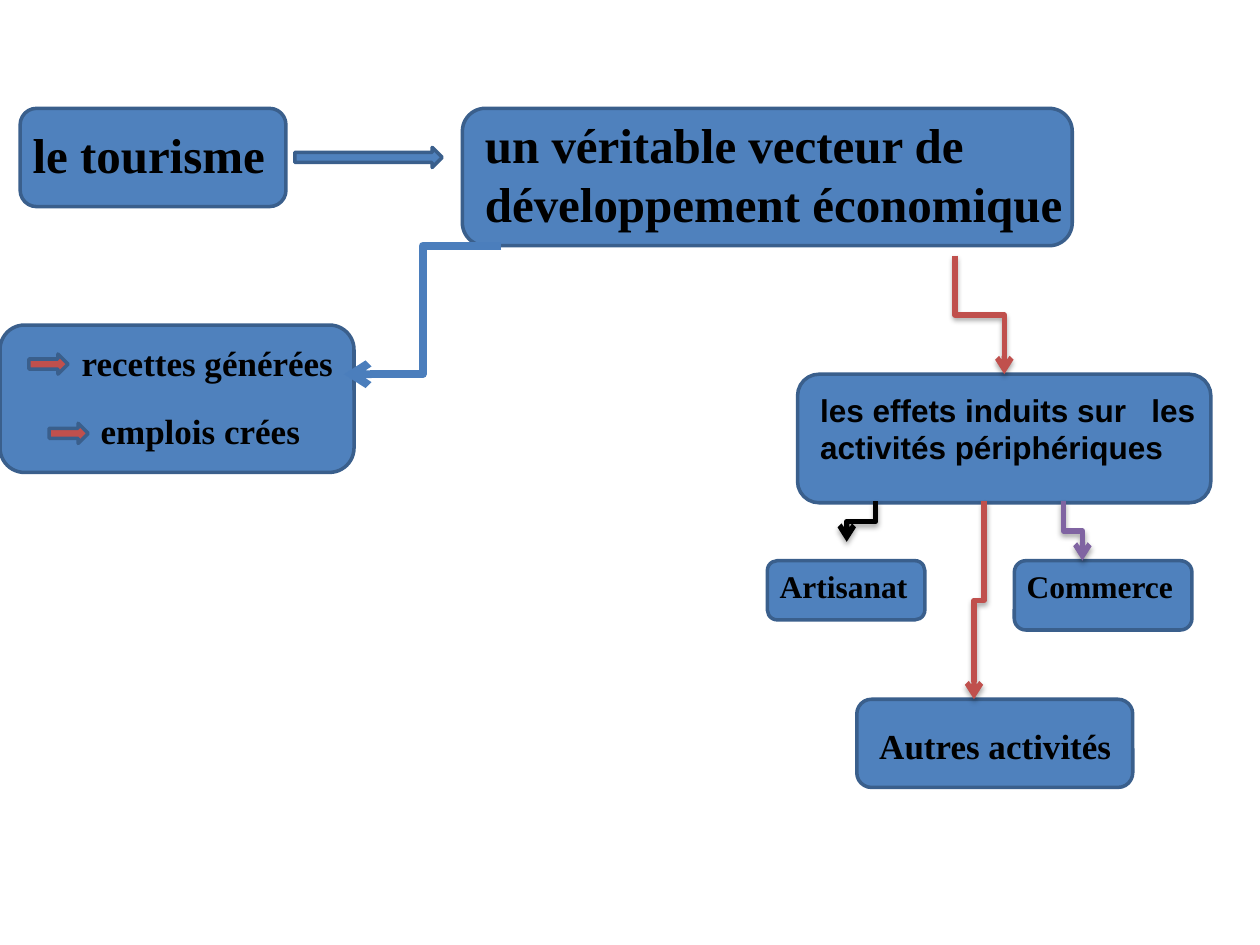
from lxml import etree
from pptx import Presentation
from pptx.dml.color import RGBColor
from pptx.enum.shapes import MSO_CONNECTOR as Conn, MSO_SHAPE as Shape
from pptx.enum.text import MSO_AUTO_SIZE as Fit, PP_ALIGN as Align
from pptx.oxml import parse_xml
from pptx.oxml.ns import nsdecls, qn
from pptx.util import Inches, Pt

BLUE = RGBColor(0x4F, 0x81, 0xBD)
EDGE = RGBColor(0x3A, 0x5F, 0x8C)
LINK = RGBColor(0x4B, 0x7E, 0xBC)
RED = RGBColor(0xC0, 0x50, 0x4D)
PURPLE = RGBColor(0x80, 0x64, 0xA2)
BLACK = RGBColor(0, 0, 0)
SERIF, SANS = "Times New Roman", "Arial"

deck = Presentation()
deck.slide_width, deck.slide_height = Inches(10), Inches(7.5)
slide = deck.slides.add_slide(deck.slide_layouts[6])
shapes = slide.shapes


def add_shape(kind, spot, fill):
    shape = shapes.add_shape(kind, *map(Inches, spot))
    shape.shadow.inherit = False
    shape.fill.solid()
    shape.fill.fore_color.rgb = fill
    shape.line.color.rgb = EDGE
    shape.line.width = Pt(2)


def add_link(start, end, color, width, down=True):
    """Draw an elbow arrow; with down it leaves its start vertically."""
    (x1, y1), (x2, y2) = start, end
    if down:
        # Lay the elbow out flat around its centre, then turn it
        mid_x, mid_y = (x1 + x2) / 2, (y1 + y2) / 2
        run, rise = (y2 - y1) / 2, abs(x2 - x1) / 2
        side = 1 if x2 > x1 else -1
        x1, x2 = mid_x + side * run, mid_x - side * run
        y1, y2 = mid_y - rise, mid_y + rise
    link = shapes.add_connector(Conn.ELBOW, *map(Inches, (x1, y1, x2, y2)))
    link.line.color.rgb = color
    link.line.width = Pt(width)
    props = link._element.spPr
    etree.SubElement(props.find(qn("a:ln")), qn("a:tailEnd"), type="arrow")
    effect = etree.SubElement(props, qn("a:effectLst"))
    if down:
        props.find(qn("a:xfrm")).set("rot", str((270 if side > 0 else 90) * 60000))
        effect.append(parse_xml(
            f'<a:outerShdw {nsdecls("a")} blurRad="{Pt(3.1)}" dist="{Pt(1.8)}" '
            'dir="5400000" rotWithShape="0"><a:srgbClr val="000000">'
            '<a:alpha val="35000"/></a:srgbClr></a:outerShdw>'))


# Boxes
for spot in [
    (6.8, 5.55, 2.19, 0.7),
    (8.05, 4.45, 1.41, 0.55),
    (6.09, 4.45, 1.25, 0.47),
    (6.33, 2.97, 3.28, 1.02),
    (0, 2.58, 2.81, 1.17),
    (3.67, 0.86, 4.84, 1.09),
    (0.16, 0.86, 2.11, 0.78),
]:
    add_shape(Shape.ROUNDED_RECTANGLE, spot, BLUE)

# Block arrows
for spot, fill in [
    ((2.34, 1.17, 1.17, 0.16), BLUE),
    ((0.23, 2.81, 0.31, 0.16), RED),
    ((0.39, 3.36, 0.31, 0.16), RED),
]:
    add_shape(Shape.RIGHT_ARROW, spot, fill)

# Labels
for text, spot, size, name, wrap in [
    ("le tourisme", (0.16, 0.94, 2.11, 0.57), 28, SERIF, True),
    ("un véritable vecteur de développement économique",
     (3.75, 0.86, 4.84, 1.04), 28, SERIF, True),
    ("recettes générées", (0.55, 2.66, 2.28, 0.44), 20, SERIF, True),
    ("emplois crées", (0.7, 3.2, 1.8, 0.44), 20, SERIF, False),
    ("les effets induits sur\tles activités périphériques",
     (6.41, 3.05, 3.28, 0.71), 18, SANS, True),
    ("Artisanat", (6.09, 4.45, 1.23, 0.4), 18, SERIF, False),
    ("Commerce", (8.05, 4.45, 1.38, 0.4), 18, SERIF, False),
    ("Autres activités", (6.88, 5.7, 2.06, 0.44), 20, SERIF, False),
]:
    frame = shapes.add_textbox(*map(Inches, spot)).text_frame
    frame.word_wrap = wrap
    frame.auto_size = Fit.SHAPE_TO_FIT_TEXT
    para = frame.paragraphs[0]
    para.text = text
    para.alignment = Align.LEFT
    if "\t" in text:
        tabs = etree.SubElement(para._p.get_or_add_pPr(), qn("a:tabLst"))
        etree.SubElement(tabs, qn("a:tab"), pos=str(Inches(2.63)), algn="l")
    font = para.runs[0].font
    for key, value in {"size": Pt(size), "name": name, "bold": True}.items():
        setattr(font, key, value)
    font.color.rgb = BLACK

# Elbow arrows
add_link((3.98, 1.95), (2.73, 2.97), LINK, 4.5, down=False)
for start, end, color in [
    ((7.58, 2.03), (7.97, 2.97), RED),
    ((6.95, 3.98), (6.72, 4.3), BLACK),
    ((8.44, 3.98), (8.59, 4.45), PURPLE),
    ((7.81, 3.98), (7.73, 5.55), RED),
]:
    add_link(start, end, color, 3)

deck.save("out.pptx")
